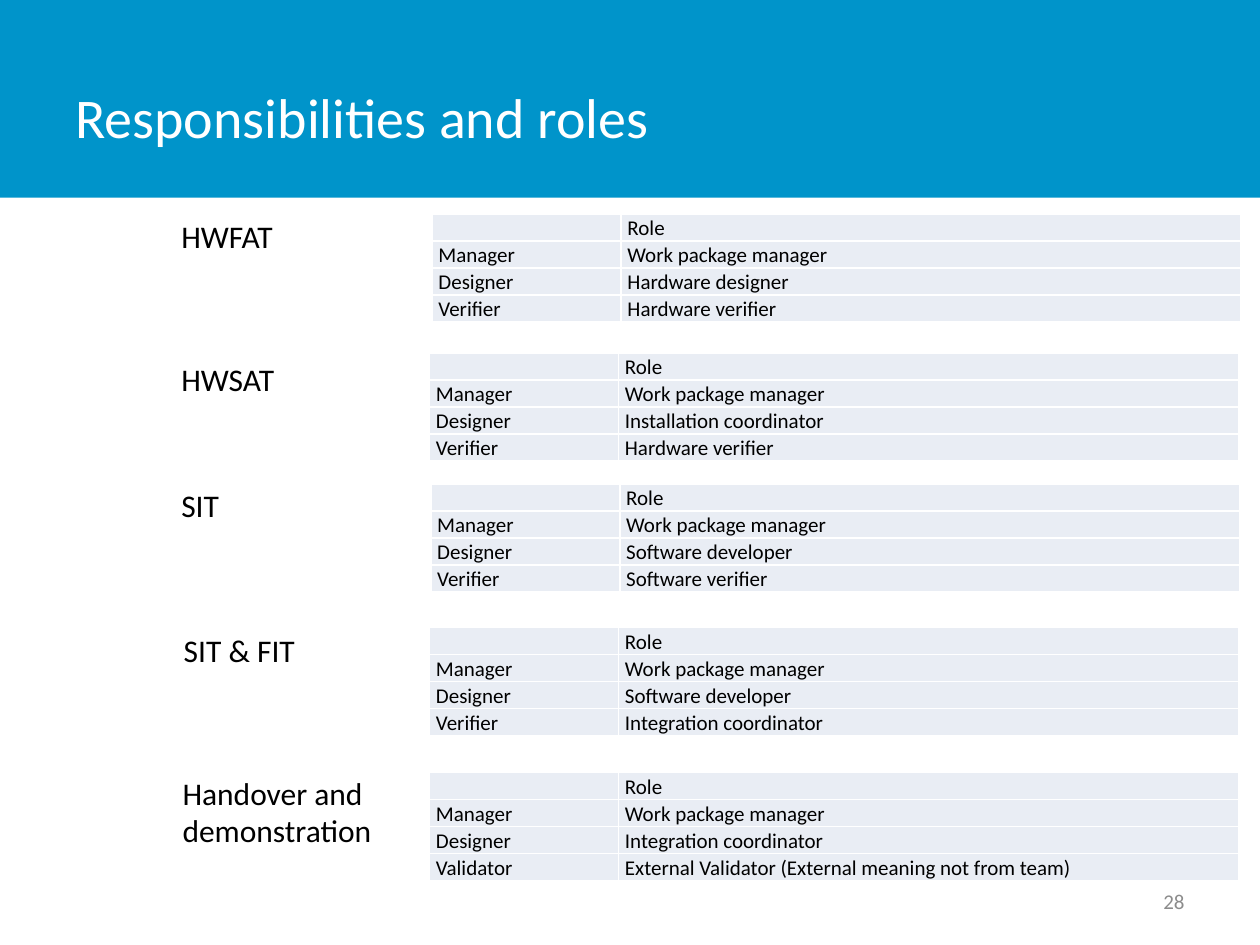
from lxml.etree import SubElement
from pptx import Presentation
from pptx.dml.color import RGBColor
from pptx.enum.shapes import MSO_SHAPE
from pptx.enum.text import MSO_ANCHOR, PP_ALIGN
from pptx.oxml.ns import qn
from pptx.util import Inches, Pt

COLS, ROWS = 100, 75
BLUE, PALE, WHITE, BLACK, GREY = "0094CA", "E9EDF4", "FFFFFF", "000000", "8C8C8C"


def rgb(value):
    return RGBColor.from_string(value)


def write(tf, text, size=18, color=BLACK, font="Calibri", align=None, spacing=None):
    p = tf.paragraphs[0]
    p.alignment = align
    p.line_spacing = spacing
    if not text:
        SubElement(p._p, qn("a:endParaRPr"), sz=str(size * 100))
        return
    r = p.add_run()
    r.text = text
    r.font.size = Pt(size)
    r.font.name = font
    r.font.color.rgb = rgb(color)


class Page:
    def __init__(self, prs):
        self.unit_x = prs.slide_width / COLS
        self.unit_y = prs.slide_height / ROWS
        self.s = prs.slides.add_slide(prs.slide_layouts[6])

    def place(self, x, y, w, h):
        return (round(x * self.unit_x), round(y * self.unit_y),
                round(w * self.unit_x), round(h * self.unit_y))

    def band(self, *box, fill):
        sp = self.s.shapes.add_shape(MSO_SHAPE.RECTANGLE, *self.place(*box))
        sp.shadow.inherit = False
        sp.fill.solid()
        sp.fill.fore_color.rgb = rgb(fill)
        sp.line.fill.background()

    def text(self, *box, text, anchor=MSO_ANCHOR.TOP, **style):
        tf = self.s.shapes.add_textbox(*self.place(*box)).text_frame
        tf.word_wrap = True
        tf.vertical_anchor = anchor
        write(tf, text, **style)

    def cell(self, cell, text, align):
        cell.margin_left = cell.margin_right = Inches(0.05)
        cell.margin_top = cell.margin_bottom = 0
        tcPr = cell._tc.get_or_add_tcPr()
        for side in ("lnL", "lnR", "lnT", "lnB"):
            ln = SubElement(tcPr, qn(f"a:{side}"), w=str(Pt(1)))
            SubElement(SubElement(ln, qn("a:solidFill")), qn("a:srgbClr"), val=WHITE)
        cell.fill.solid()
        cell.fill.fore_color.rgb = rgb(PALE)
        write(cell.text_frame, text, size=12, align=align, spacing=1.07)

    def table(self, x, y, widths, row_height, data):
        box = self.place(x, y, sum(widths), row_height * len(data))
        table = self.s.shapes.add_table(len(data), len(widths), *box).table
        table.first_row = table.horz_banding = False
        for column, width in zip(table.columns, widths):
            column.width = round(width * self.unit_x)
        for i, row in enumerate(data):
            for j, value in enumerate(row):
                align = PP_ALIGN.LEFT if i and j else PP_ALIGN.JUSTIFY
                self.cell(table.cell(i, j), value, align)


PHASES = [
    ("HWFAT", 13.4, 16.7, 34.3, 17, "Hardware designer", "Verifier", "Hardware verifier"),
    ("HWSAT", 13.4, 28.1, 34.1, 28, "Installation coordinator", "Verifier", "Hardware verifier"),
    ("SIT", 13.4, 38.1, 34.2, 38.4, "Software developer", "Verifier", "Software verifier"),
    ("SIT & FIT", 13.6, 49.6, 34.1, 49.8, "Software developer", "Verifier",
     "Integration coordinator"),
    ("Handover and demonstration", 13.5, 60.9, 34.1, 61.3, "Integration coordinator",
     "Validator", "External Validator (External meaning not from team)"),
]


def main():
    prs = Presentation()
    prs.slide_width, prs.slide_height = Inches(10), Inches(7.5)
    page = Page(prs)
    page.band(0, 0, COLS, 15.7, fill=BLUE)
    page.text(5, 3, 78.1, 12.5, text="Responsibilities and roles",
              anchor=MSO_ANCHOR.MIDDLE, size=32, color=WHITE)
    for name, label_x, label_y, table_x, table_y, designer, checker, checker_role in PHASES:
        page.text(label_x, label_y, 17.1, 4, text=name)
        page.table(table_x, table_y, (15, 49.2), 2.05, [
            ("", "Role"),
            ("Manager", "Work package manager"),
            ("Designer", designer),
            (checker, checker_role),
        ])
    page.text(71.7, 69.5, 23.3, 4, text="28", anchor=MSO_ANCHOR.MIDDLE,
              size=12, color=GREY, align=PP_ALIGN.RIGHT)
    prs.save("out.pptx")


if __name__ == "__main__":
    main()
